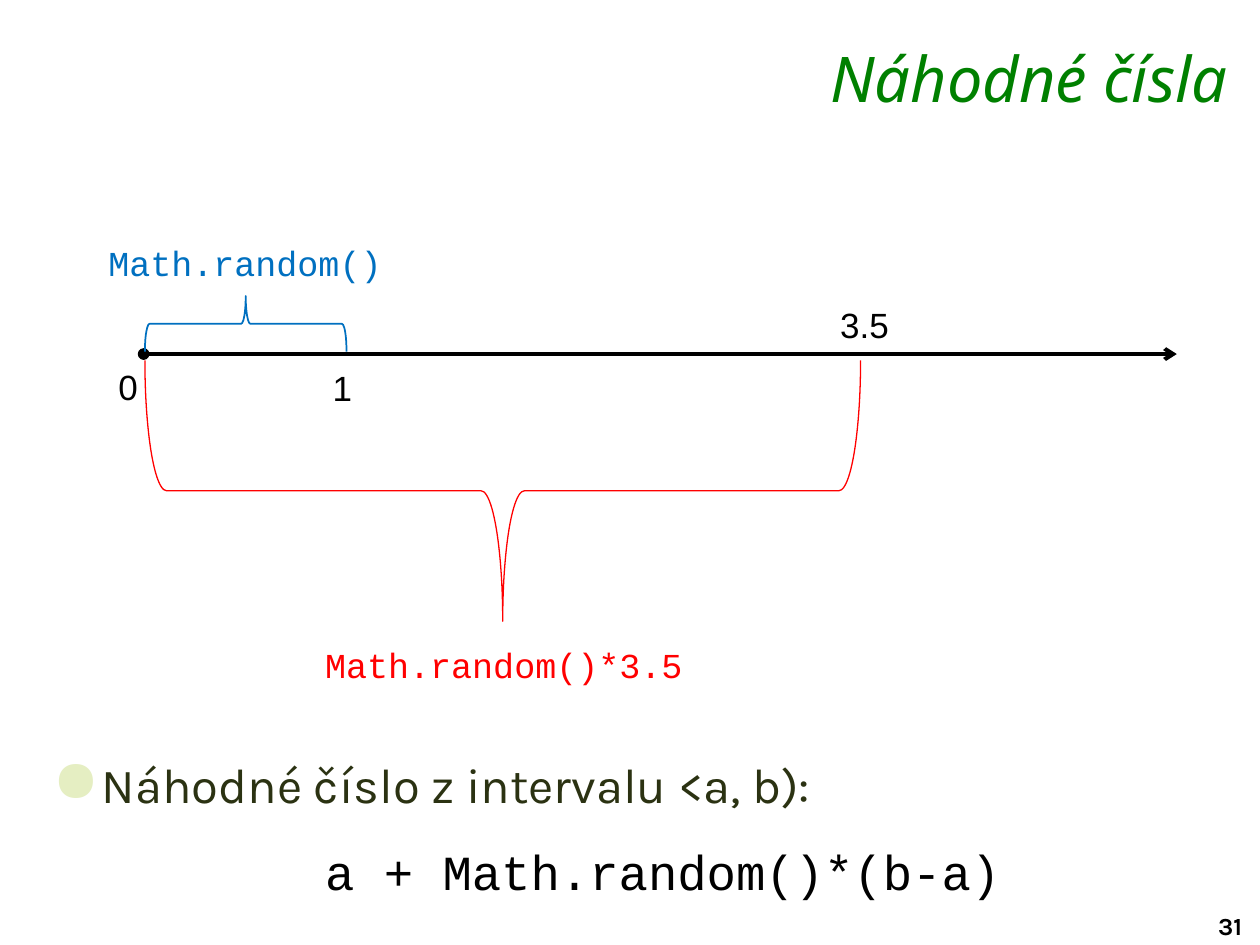
from dataclasses import dataclass

from lxml import etree
from pptx import Presentation
from pptx.dml.color import RGBColor
from pptx.enum.shapes import MSO_CONNECTOR, MSO_SHAPE
from pptx.enum.text import MSO_ANCHOR, PP_ALIGN
from pptx.oxml.ns import qn
from pptx.util import Inches, Pt

STRAIGHT = MSO_CONNECTOR.STRAIGHT
LEFT_BRACE = MSO_SHAPE.LEFT_BRACE
TOP = MSO_ANCHOR.TOP
LEFT, CENTER, RIGHT = PP_ALIGN.LEFT, PP_ALIGN.CENTER, PP_ALIGN.RIGHT

WIDTH, HEIGHT = Inches(10), Inches(7.5)
COLUMNS, ROWS = 100, 75


@dataclass(frozen=True)
class Style:
    """Look of a piece of text."""
    font: str
    size: int
    color: str
    bold: bool = False
    italic: bool = False


@dataclass(frozen=True)
class Theme:
    """Colours and type sizes of the slide."""
    black: str = "000000"
    blue: str = "0070C0"
    red: str = "FF0000"
    bullet: str = "E5EEC2"
    title: Style = Style("Noto Sans", 36, "008000", italic=True)
    number: Style = Style("Arial", 20, "000000")
    unit_code: Style = Style("Courier New", 20, "0070C0")
    scaled_code: Style = Style("Courier New", 20, "FF0000")
    body: Style = Style("Karla", 28, "2B3212")
    formula: Style = Style("Courier New", 28, "000000")
    page: Style = Style("Karla", 14, "000000", bold=True)


@dataclass(frozen=True)
class Label:
    """One line of text placed on the grid, with insets in grid units."""
    text: str
    style: Style
    left: float
    top: float
    width: float
    height: float
    align: PP_ALIGN = LEFT
    inset_left: float = 1
    inset_top: float = 0.7


@dataclass(frozen=True)
class Brace:
    """A horizontal brace over a stretch of the number line."""
    start: float
    end: float
    top: float
    depth: float
    rotation: int
    color: str
    weight: float


THEME = Theme()
LABELS = [
    Label("31", THEME.page, 95.7, 71.8, 5.1, 3.3, inset_top=0.5),
    Label("Náhodné čísla", THEME.title, 22.9, 3.1, 75.5, 5.8, RIGHT, inset_top=0),
    Label("Math.random()", THEME.unit_code, 7.5, 18.2, 23.9, 4.4, CENTER, inset_top=1),
    Label("0", THEME.number, 9, 28.3, 1.4, 4.4, inset_left=0.4),
    Label("1", THEME.number, 26, 28.4, 1.4, 4.4, inset_left=0.4),
    Label("Math.random()*3.5", THEME.scaled_code, 24.7, 50.1, 30.6, 4.4, CENTER, inset_top=1),
    Label("3.5", THEME.number, 65.7, 23.4, 6.4, 4.4),
]
BRACES = [
    Brace(11.5, 27.5, 23.5, 4.4, 90, THEME.blue, 1),
    Brace(11.5, 68.3, 28.6, 20.7, 270, THEME.red, 0.75),
]


def across(columns: float) -> int:
    """Turn grid columns into a length."""
    return round(WIDTH * columns / COLUMNS)


def down(rows: float) -> int:
    """Turn grid rows into a length."""
    return round(HEIGHT * rows / ROWS)


def format_text(para, style: Style) -> None:
    """Apply a style to every run of a paragraph."""
    for span in para.runs:
        span.font.name = style.font
        span.font.size = Pt(style.size)
        span.font.bold = style.bold
        span.font.italic = style.italic
        span.font.color.rgb = RGBColor.from_string(style.color)


def add_label(page, label: Label) -> None:
    """Draw a single line of text."""
    box = page.shapes.add_textbox(across(label.left), down(label.top),
                                  across(label.width), down(label.height))
    frame = box.text_frame
    frame.word_wrap = label.align == RIGHT
    frame.vertical_anchor = TOP
    frame.margin_left = across(label.inset_left)
    frame.margin_top = down(label.inset_top)
    frame.text = label.text
    para = frame.paragraphs[0]
    para.alignment = label.align
    format_text(para, label.style)


def add_brace(page, brace: Brace) -> None:
    """Draw a left brace turned to lie along the number line."""
    length = brace.end - brace.start
    middle_x = (brace.start + brace.end) / 2
    middle_y = brace.top + brace.depth / 2
    shape = page.shapes.add_shape(
        LEFT_BRACE, across(middle_x - brace.depth / 2), down(middle_y - length / 2),
        across(brace.depth), down(length))
    shape.rotation = brace.rotation
    shape.shadow.inherit = False
    shape.fill.background()
    shape.line.color.rgb = RGBColor.from_string(brace.color)
    shape.line.width = Pt(brace.weight)


def add_number_line(page) -> None:
    """Draw the axis with a dot at zero and an arrow at its end."""
    axis = page.shapes.add_connector(STRAIGHT, across(11.4), down(28.1),
                                     across(93.4), down(28.1))
    axis.line.color.rgb = RGBColor.from_string(THEME.black)
    axis.line.width = Pt(2.25)
    outline = axis.line._get_or_add_ln()
    for tag, kind in (("a:headEnd", "oval"), ("a:tailEnd", "arrow")):
        etree.SubElement(outline, qn(tag), type=kind, w="med", len="med")
    etree.SubElement(axis._element.spPr, qn("a:effectLst"))


def set_indent(para, left: float) -> None:
    """Give a paragraph a left margin and a hanging first line."""
    properties = para._p.get_or_add_pPr()
    properties.set("marL", str(across(left)))
    properties.set("indent", str(-across(3.9)))


def add_bullet(para) -> None:
    """Give a paragraph the round pale bullet."""
    properties = para._p.get_or_add_pPr()
    color = etree.SubElement(properties, qn("a:buClr"))
    etree.SubElement(color, qn("a:srgbClr"), val=THEME.bullet)
    etree.SubElement(properties, qn("a:buSzPct"), val="120000")
    etree.SubElement(properties, qn("a:buChar"), char="●")


def add_body(page) -> None:
    """Draw the bulleted statement and its formula."""
    box = page.shapes.add_textbox(across(3.2), down(59.1), across(93.8), down(11.4))
    frame = box.text_frame
    frame.word_wrap = True
    frame.margin_top = down(0.8)
    frame.text = "Náhodné číslo z intervalu <a, b):"
    statement = frame.paragraphs[0]
    statement.space_after = Pt(8)
    set_indent(statement, 3.9)
    add_bullet(statement)
    format_text(statement, THEME.body)
    formula = frame.add_paragraph()
    formula.text = "a + Math.random()*(b-a)"
    formula.level = 1
    formula.alignment = CENTER
    formula.space_before = Pt(8)
    set_indent(formula, 8.9)
    format_text(formula, THEME.formula)


def main() -> None:
    """Build the slide and save it."""
    deck = Presentation()
    deck.slide_width, deck.slide_height = WIDTH, HEIGHT
    page = deck.slides.add_slide(deck.slide_layouts[6])
    add_number_line(page)
    for brace in BRACES:
        add_brace(page, brace)
    for label in LABELS:
        add_label(page, label)
    add_body(page)
    deck.save("out.pptx")


if __name__ == "__main__":
    main()
